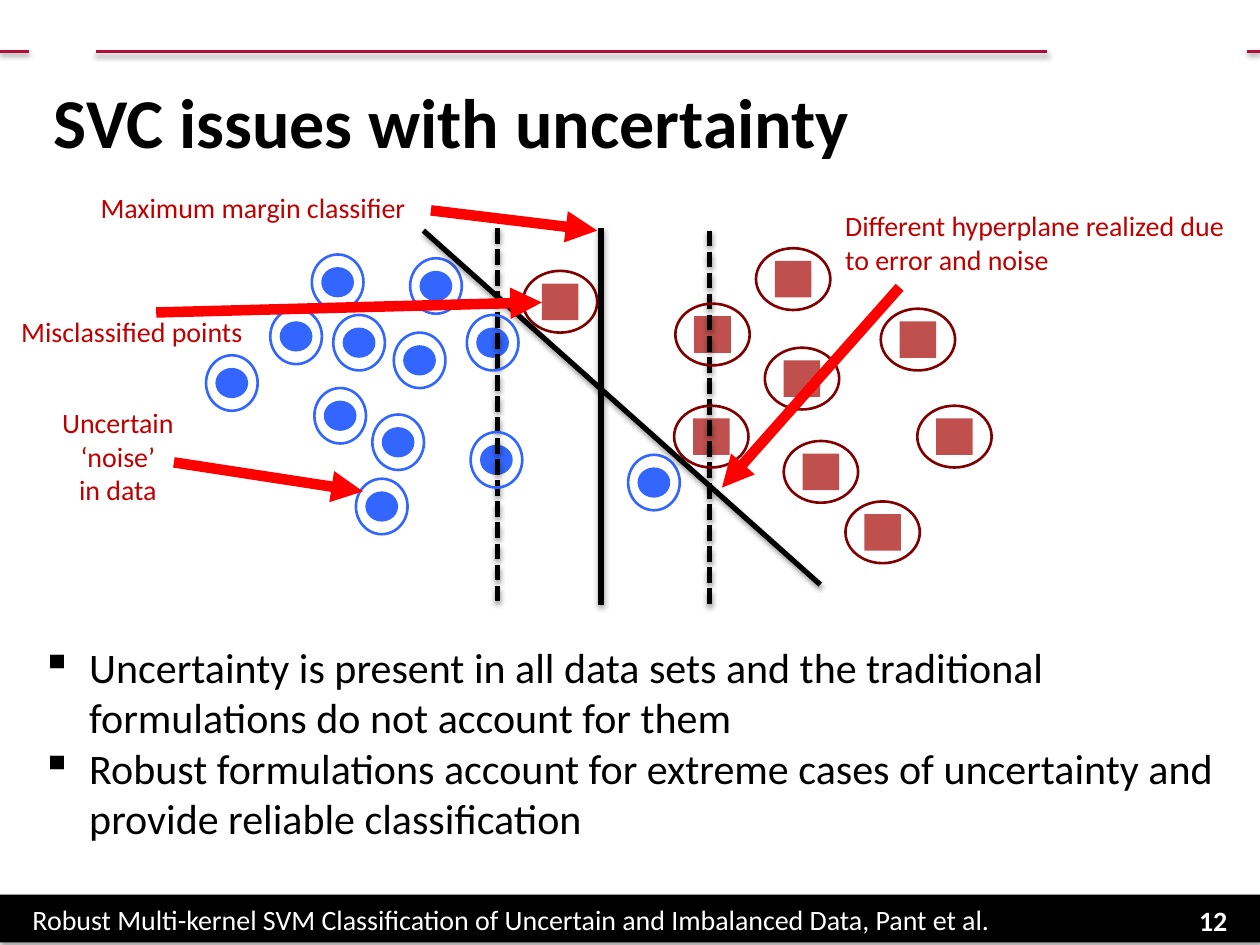
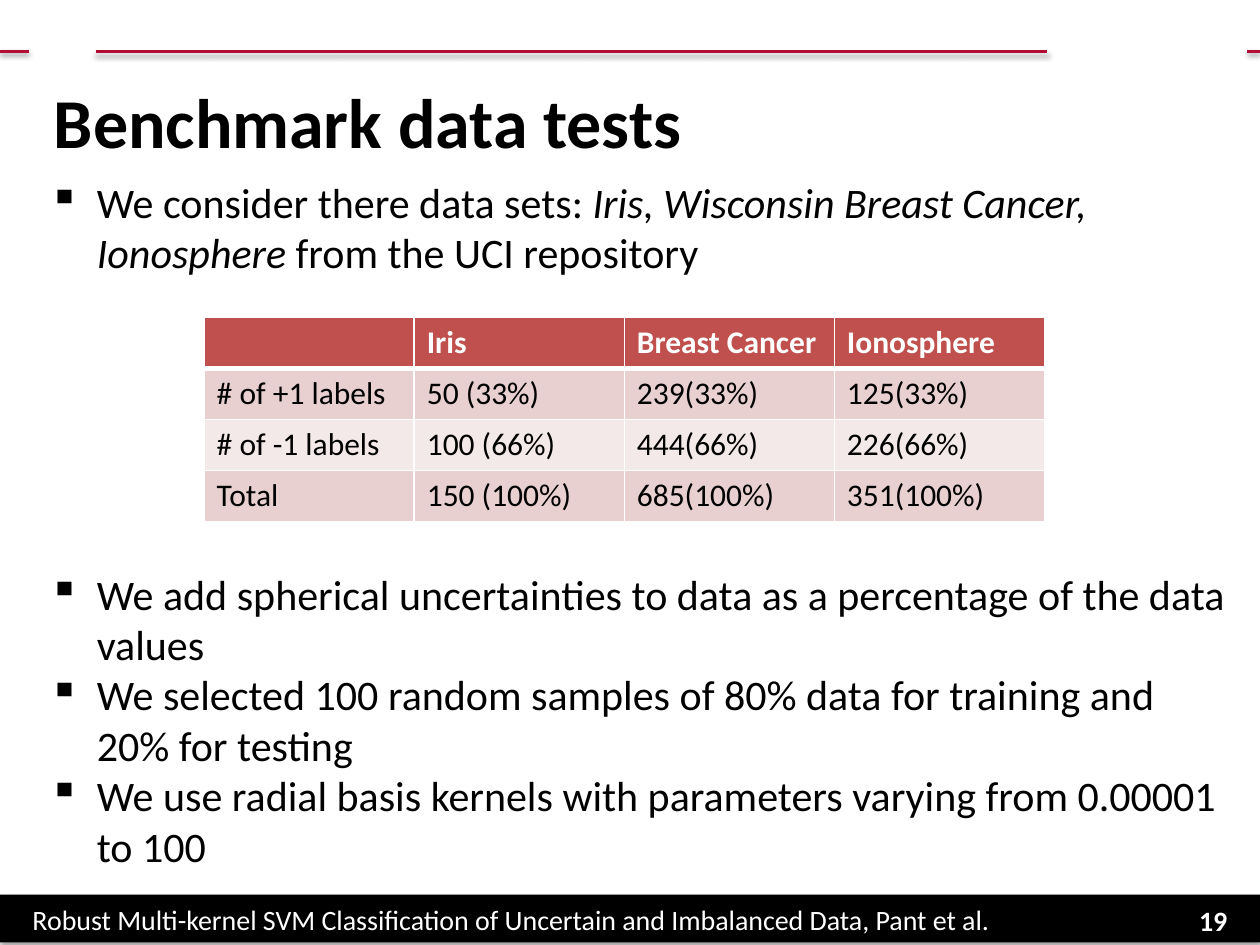
from lxml import etree
from pptx import Presentation
from pptx.dml.color import RGBColor
from pptx.enum import dml, shapes, text
from pptx.oxml.ns import qn
from pptx.util import Inches, Pt

COLORS = {
    "black": "000000", "white": "FFFFFF", "rule": "B20D35",
    "blue": "3366FF", "brick": "C0504D", "maroon": "800000",
    "arrow": "FF0000", "label": "C00000",
    "band_dark": "E8D0D0", "band_light": "F4E9E9",
}
FONT = "Calibri"
FOOTER = ("Robust Multi-kernel SVM Classification of Uncertain and "
          "Imbalanced Data, Pant et al.")
RULE_SPANS = [(0.76, 8.31), (0, 0.23), (9.9, 10)]

NEGATIVE_POINTS = [
    (2.22, 2.55), (3.03, 3.39), (2.57, 3.18), (2.72, 2.6), (2.55, 2.12),
    (1.71, 2.92), (3.2, 2.74), (3.81, 3.53), (3.78, 2.6), (2.9, 3.9),
    (3.33, 2.15), (5.06, 3.71),
]
POSITIVE_POINTS = [
    (5.51, 2.51), (6.15, 2.07), (7.14, 2.55), (6.37, 3.6), (7.43, 3.32),
    (6.22, 2.86), (6.86, 4.08), (5.5, 3.32), (4.3, 2.25),
]
DOT, DOT_RING = (0.26, 0.24), (0.41, 0.44)
SQUARE, SQUARE_RING = (0.29, 0.29), (0.59, 0.49)

CALLOUTS = [
    ((0.7, 1.46, 2.83, 0.37), ["Maximum margin classifier"], "LEFT",
     (3.42, 1.67), (4.74, 1.83)),
    ((0.07, 2.45, 2.33, 0.37), ["Misclassified points"], "LEFT",
     (1.24, 2.48), (4.3, 2.4)),
    ((0.39, 3.17, 1.09, 0.91), ["Uncertain ‘noise’", "in data"], "CENTER",
     (1.38, 3.67), (2.88, 3.9)),
    ((6.61, 1.61, 3.33, 0.64),
     ["Different hyperplane realized due to error and noise"], "LEFT",
     (7.14, 2.28), (5.73, 3.87)),
]
DATA_SETS = [
    ["", "Iris", "Breast Cancer", "Ionosphere"],
    ["# of +1 labels", "50 (33%)", "239(33%)", "125(33%)"],
    ["# of -1 labels", "100 (66%)", "444(66%)", "226(66%)"],
    ["Total", "150 (100%)", "685(100%)", "351(100%)"],
]


def rgb(color):
    return RGBColor.from_string(COLORS[color])


def add_effects(shape, shadow=None):
    effects = etree.SubElement(shape._element.spPr, qn("a:effectLst"))
    if shadow:
        opacity, distance = shadow
        outer = etree.SubElement(
            effects, qn("a:outerShdw"), blurRad=str(Pt(3.1)),
            dist=str(Pt(distance)), dir="5400000", rotWithShape="0")
        tone = etree.SubElement(outer, qn("a:srgbClr"), val=COLORS["black"])
        etree.SubElement(tone, qn("a:alpha"), val=str(opacity * 1000))


def add_line(slide, start, end, color, width, dashed=False, arrow=False):
    line = slide.shapes.add_connector(
        shapes.MSO_CONNECTOR.STRAIGHT, *map(Inches, start + end))
    line.line.color.rgb = rgb(color)
    line.line.width = Pt(width)
    if dashed:
        line.line.dash_style = dml.MSO_LINE.SQUARE_DOT
    if arrow:
        etree.SubElement(line.line._get_or_add_ln(), qn("a:tailEnd"),
                         type="triangle")
    add_effects(line, None if arrow else (38, 1.6))


def add_figure(slide, kind, box, fill=None, outline=None):
    figure = slide.shapes.add_shape(kind, *map(Inches, box))
    if fill:
        figure.fill.solid()
        figure.fill.fore_color.rgb = rgb(fill)
    else:
        figure.fill.background()
    if outline:
        figure.line.color.rgb = rgb(outline)
        figure.line.width = Pt(1.5)
    else:
        figure.line.fill.background()
    return figure


def style(paragraph, size, color, bold=False):
    font = paragraph.font
    font.name, font.size, font.bold = FONT, Pt(size), bold
    font.color.rgb = rgb(color)


def add_bullet(paragraph):
    properties = paragraph._p.get_or_add_pPr()
    properties.set("marL", str(Inches(0.38)))
    properties.set("indent", str(Inches(-0.38)))
    etree.SubElement(properties, qn("a:buChar"), char="▪")


def add_text(slide, box, lines, size, color, bold=False, align="LEFT",
             anchor="TOP", bullets=False):
    frame = slide.shapes.add_textbox(*map(Inches, box)).text_frame
    frame.word_wrap = True
    frame.vertical_anchor = text.MSO_ANCHOR[anchor]
    for index, line in enumerate(lines):
        paragraph = frame.add_paragraph() if index else frame.paragraphs[0]
        paragraph.alignment = text.PP_ALIGN[align]
        if bullets:
            add_bullet(paragraph)
        style(paragraph, size, color, bold)
        for position, part in enumerate(line.split("*")):
            if part:
                run = paragraph.add_run()
                run.text = part
                if position % 2:
                    run.font.italic = True


def add_bullets(slide, box, lines):
    add_text(slide, box, lines, 24, "black", bullets=True)


def add_page(deck, title, number):
    slide = deck.slides.add_slide(deck.slide_layouts[6])
    for left, right in RULE_SPANS:
        add_line(slide, (left, 0.41), (right, 0.41), "rule", 2)
    band = add_figure(slide, shapes.MSO_SHAPE.RECTANGLE,
                      (0, 7.1, 10, 0.38), fill="black")
    add_effects(band, (35, 1.8))
    add_text(slide, (0.16, 7.1, 7.97, 0.39), [FOOTER], 16, "white",
             anchor="MIDDLE")
    add_text(slide, (9.01, 7.11, 0.83, 0.39), [str(number)], 16, "white",
             bold=True, align="RIGHT", anchor="MIDDLE")
    add_text(slide, (0.33, 0.53, 9.44, 0.85), [title], 40, "black",
             bold=True, anchor="MIDDLE")
    return slide


def add_points(slide, points, kind, size, color):
    for point in points:
        add_figure(slide, kind, point + size, fill=color).shadow.inherit = False


def add_rings(slide, points, size, ring, color):
    for x, y in points:
        box = (x + (size[0] - ring[0]) / 2, y + (size[1] - ring[1]) / 2) + ring
        halo = add_figure(slide, shapes.MSO_SHAPE.OVAL, box, outline=color)
        halo.shadow.inherit = False


def add_cell_borders(cell, bottom):
    properties = cell._tc.get_or_add_tcPr()
    for side, width in (("L", 1), ("R", 1), ("T", 1), ("B", bottom)):
        edge = etree.SubElement(properties, qn(f"a:ln{side}"),
                                w=str(Pt(width)))
        fill = etree.SubElement(edge, qn("a:solidFill"))
        etree.SubElement(fill, qn("a:srgbClr"), val=COLORS["white"])


def add_data_table(slide, box, rows):
    table = slide.shapes.add_table(
        len(rows), len(rows[0]), *map(Inches, box)).table
    table.horz_banding = False
    for r, row in enumerate(rows):
        header = r == 0
        band = "brick" if header else "band_dark" if r % 2 else "band_light"
        for c, value in enumerate(row):
            cell = table.cell(r, c)
            add_cell_borders(cell, 3 if header else 1)
            cell.fill.solid()
            cell.fill.fore_color.rgb = rgb(band)
            cell.text = value
            style(cell.text_frame.paragraphs[0], 18,
                  "white" if header else "black", header)


def build_uncertainty(deck):
    slide = add_page(deck, "SVC issues with uncertainty", 12)
    add_line(slide, (4.77, 1.81), (4.77, 4.8), "black", 3)
    add_points(slide, POSITIVE_POINTS, shapes.MSO_SHAPE.RECTANGLE, SQUARE,
               "brick")
    add_points(slide, NEGATIVE_POINTS, shapes.MSO_SHAPE.OVAL, DOT, "blue")
    for x, top in ((5.63, 1.83), (3.95, 1.81)):
        add_line(slide, (x, top), (x, top + 2.99), "black", 3, dashed=True)
    add_rings(slide, NEGATIVE_POINTS, DOT, DOT_RING, "blue")
    add_rings(slide, POSITIVE_POINTS, SQUARE, SQUARE_RING, "maroon")
    add_line(slide, (3.36, 1.83), (6.51, 4.64), "black", 3)
    for box, lines, align, start, end in CALLOUTS:
        add_line(slide, start, end, "arrow", 6, arrow=True)
        add_text(slide, box, lines, 16, "label", align=align)
    add_bullets(slide, (0.23, 5.04, 9.62, 1.72), [
        "Uncertainty is present in all data sets and the traditional "
        "formulations do not account for them",
        "Robust formulations account for extreme cases of uncertainty and "
        "provide reliable classification",
    ])


def build_benchmark(deck):
    slide = add_page(deck, "Benchmark data tests", 19)
    add_bullets(slide, (0.29, 1.35, 9.62, 0.91), [
        "We consider there data sets: *Iris, Wisconsin Breast Cancer, "
        "Ionosphere* from the UCI repository",
    ])
    add_data_table(slide, (1.62, 2.52, 6.67, 1.62), DATA_SETS)
    add_bullets(slide, (0.29, 4.46, 9.62, 2.52), [
        "We add spherical uncertainties to data as a percentage of the data "
        "values",
        "We selected 100 random samples of 80% data for training and 20% for "
        "testing",
        "We use radial basis kernels with parameters varying from 0.00001 to "
        "100",
    ])


def main():
    deck = Presentation()
    deck.slide_width, deck.slide_height = Inches(10), Inches(7.5)
    build_uncertainty(deck)
    build_benchmark(deck)
    deck.save("out.pptx")


if __name__ == "__main__":
    main()
